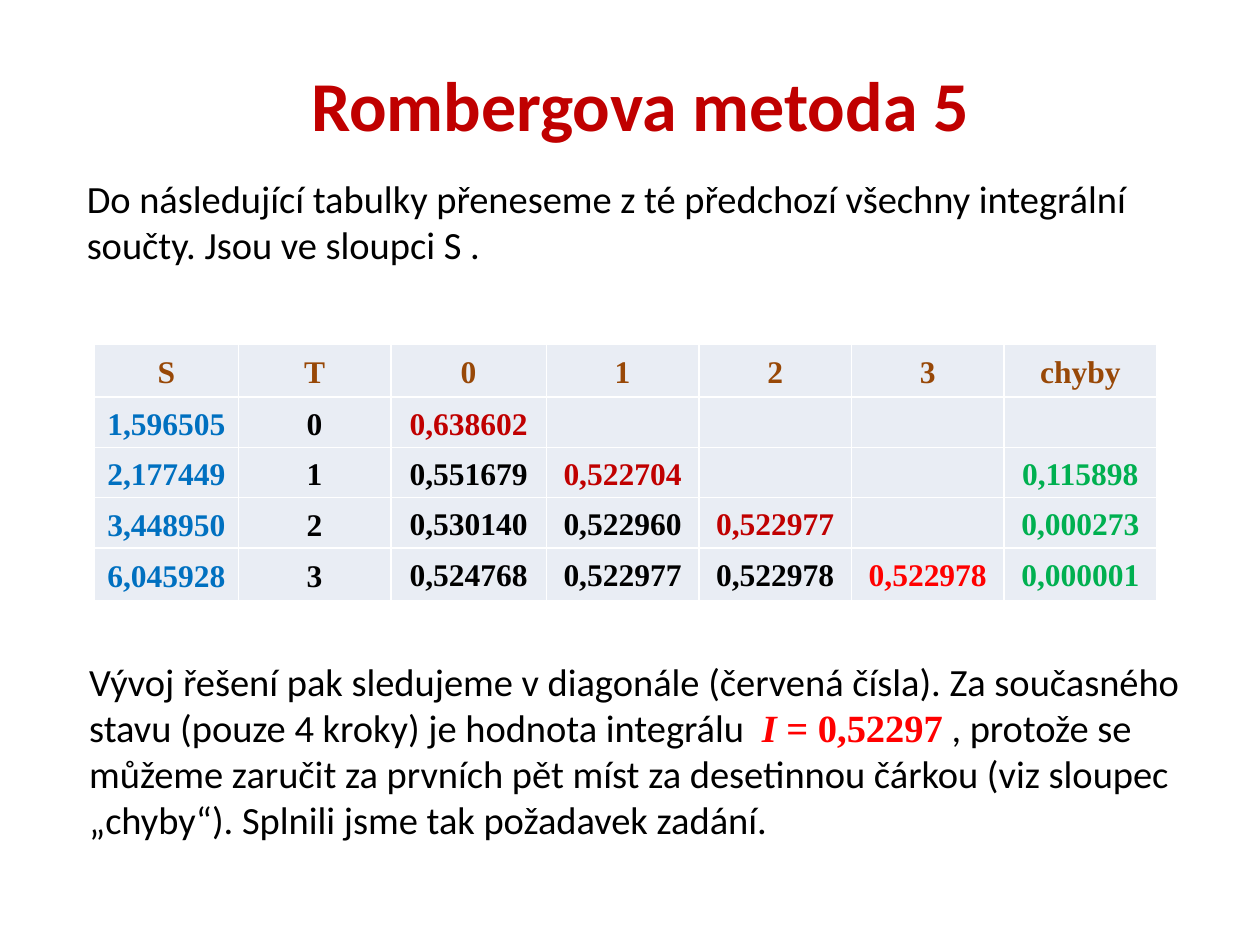
from lxml import etree
from pptx import Presentation
from pptx.dml.color import RGBColor
from pptx.enum.text import MSO_ANCHOR, MSO_AUTO_SIZE, PP_ALIGN
from pptx.oxml.ns import qn
from pptx.util import Pt

CENTER, LEFT = PP_ALIGN.CENTER, PP_ALIGN.LEFT
TOP, MIDDLE = MSO_ANCHOR.TOP, MSO_ANCHOR.MIDDLE
NO_FIT = MSO_AUTO_SIZE.NONE
TITLE_ONLY = 5

BLACK, WHITE, PALE = "000000", "FFFFFF", "E9EDF4"
DARK_RED, RED, BROWN = "C00000", "FF0000", "984807"
BLUE, GREEN = "0070C0", "00B050"

TITLE = dict(name="Calibri", size=Pt(40), bold=True, color=DARK_RED)
BODY = dict(name="Calibri", size=Pt(22), bold=False, color=BLACK)
RESULT = dict(name="Times New Roman", size=Pt(22), bold=True, color=RED)
CELL = dict(name="Times New Roman", size=Pt(18), bold=True)

HEADER = ["S", "T", "0", "1", "2", "3", "chyby"]
ROWS = [
    ["1,596505", "0", "0,638602", "", "", "", ""],
    ["2,177449", "1", "0,551679", "0,522704", "", "", "0,115898"],
    ["3,448950", "2", "0,530140", "0,522960", "0,522977", "", "0,000273"],
    ["6,045928", "3", "0,524768", "0,522977", "0,522978", "0,522978", "0,000001"],
]
COL_WIDTHS = [82.2, 87.2, 88.8] + [87.2] * 4
ROW_HEIGHTS = [30.2] + [28.8] * 3 + [30.2]


def rgb(value):
    return RGBColor.from_string(value)


def add_run(p, text, fmt):
    r = p.add_run()
    r.text = text
    for key, value in fmt.items():
        if key == "color":
            r.font.color.rgb = rgb(value)
        else:
            setattr(r.font, key, value)


def fill_text(sp, runs, align):
    tf = sp.text_frame
    tf.word_wrap = True
    tf.auto_size = NO_FIT
    p = tf.paragraphs[0]
    p.alignment = align
    for text, fmt in runs:
        add_run(p, text, fmt)


def add_title(s, text, left, top, width, height):
    sp = s.shapes.title
    box = dict(left=left, top=top, width=width, height=height)
    for key, value in box.items():
        setattr(sp, key, Pt(value))
    fill_text(sp, [(text, TITLE)], CENTER)


def add_paragraph(s, runs, left, top, width, height):
    sp = s.shapes.add_textbox(Pt(left), Pt(top), Pt(width), Pt(height))
    fill_text(sp, runs, LEFT)


def set_borders(cell):
    tc_pr = cell._tc.get_or_add_tcPr()
    for side in ("lnL", "lnR", "lnT", "lnB"):
        ln = etree.SubElement(tc_pr, qn(f"a:{side}"), w=str(Pt(1)))
        fill = etree.SubElement(ln, qn("a:solidFill"))
        etree.SubElement(fill, qn("a:srgbClr"), val=WHITE)


def cell_color(row, col):
    if row == 0:
        return BROWN
    if col == 0:
        return BLUE
    if col == len(HEADER) - 1:
        return GREEN
    if col == row + 1:  # diagonal; its last value is the result
        return RED if row == len(ROWS) else DARK_RED
    return BLACK


def format_cell(cell, text, row, col):
    centred = row == 0 or col < 2
    layout = dict(
        margin_left=Pt(0.7), margin_right=Pt(0.7), margin_bottom=Pt(0),
        margin_top=Pt(2.9 if centred else 5.8),
        vertical_anchor=MIDDLE if centred else TOP,
    )
    for key, value in layout.items():
        setattr(cell, key, value)
    set_borders(cell)
    cell.fill.solid()
    cell.fill.fore_color.rgb = rgb(PALE)
    p = cell.text_frame.paragraphs[0]
    p.alignment = CENTER
    if text:
        add_run(p, text, {**CELL, "color": cell_color(row, col)})


def add_romberg_table(s, left, top):
    data = [HEADER] + ROWS
    table = s.shapes.add_table(
        len(data), len(HEADER), Pt(left), Pt(top),
        Pt(sum(COL_WIDTHS)), Pt(sum(ROW_HEIGHTS))).table
    table.first_row = table.horz_banding = False
    for column, width in zip(table.columns, COL_WIDTHS):
        column.width = Pt(width)
    for i, values in enumerate(data):
        table.rows[i].height = Pt(ROW_HEIGHTS[i])
        for j, text in enumerate(values):
            format_cell(table.cell(i, j), text, i, j)


def main():
    prs = Presentation()
    prs.slide_width, prs.slide_height = Pt(720), Pt(540)
    s = prs.slides.add_slide(prs.slide_layouts[TITLE_ONLY])

    # Title and introduction
    add_title(s, "Rombergova metoda 5", 93.6, 31.7, 544.3, 55.4)
    add_paragraph(s, [(
        "Do následující tabulky přeneseme z té předchozí všechny integrální "
        "součty. Jsou ve sloupci S .", BODY)], 42.5, 96.5, 649.4, 60.5)

    # Table of integral sums
    add_romberg_table(s, 54, 196.6)

    # Conclusion
    add_paragraph(s, [
        ("Vývoj řešení pak sledujeme v diagonále (červená čísla). Za současného "
         "stavu (pouze 4 kroky) je hodnota integrálu  ", BODY),
        ("I ", {**RESULT, "italic": True}),
        ("= 0,52297", RESULT),
        (" , protože se můžeme zaručit za prvních pět míst za desetinnou čárkou "
         "(viz sloupec „chyby“). Splnili jsme tak požadavek zadání.", BODY),
    ], 43.9, 372.2, 649.4, 113.8)

    prs.save("out.pptx")


if __name__ == "__main__":
    main()
